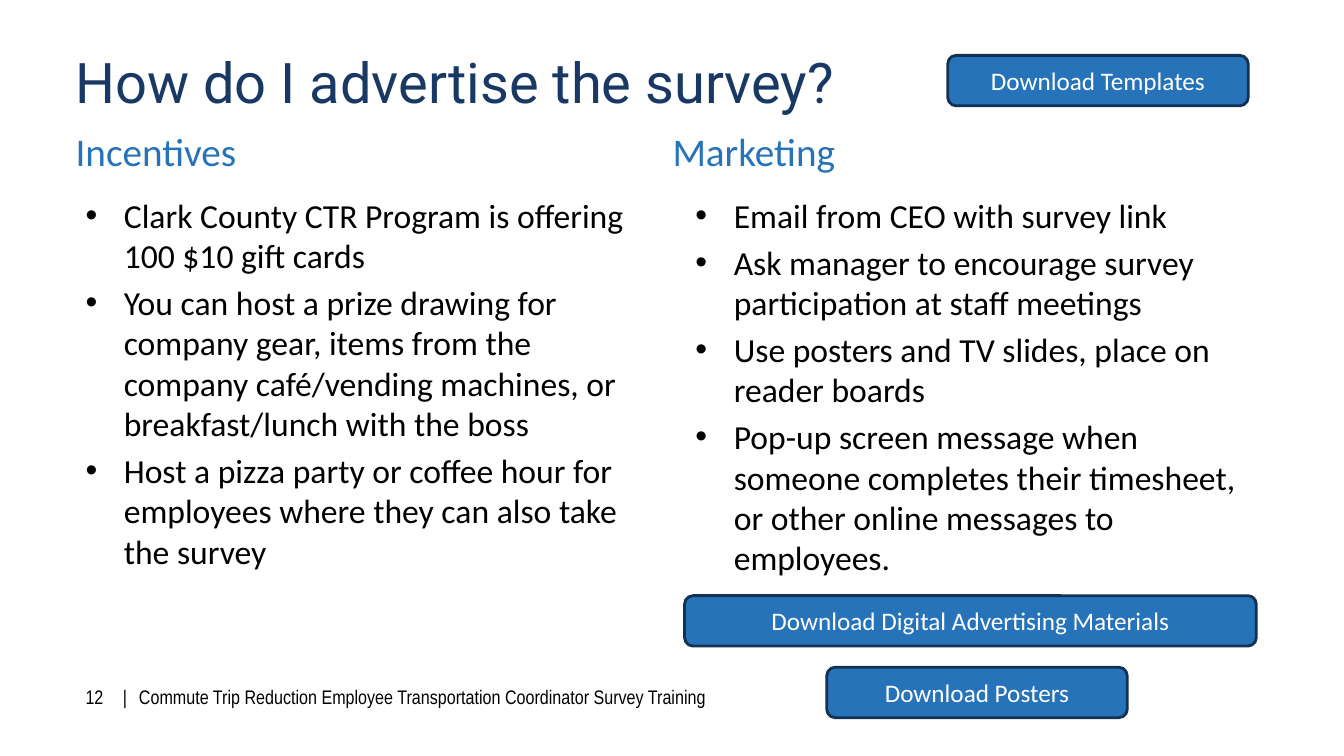
from dataclasses import dataclass

from lxml.etree import SubElement
from pptx import Presentation
from pptx.dml.color import RGBColor
from pptx.enum.shapes import MSO_SHAPE as Shape
from pptx.enum.text import MSO_ANCHOR as Anchor, MSO_AUTO_SIZE as AutoSize, PP_ALIGN as Align
from pptx.oxml.ns import qn
from pptx.util import Emu, Pt

EMU_PER_PX = 9144
COLORS = {
    "navy": "193964",
    "blue": "2773BA",
    "edge": "113252",
    "black": "000000",
    "white": "FFFFFF",
}


@dataclass(frozen=True)
class Box:
    left: int
    top: int
    width: int
    height: int


@dataclass(frozen=True)
class Style:
    font: str
    size: int
    color: str


@dataclass(frozen=True)
class Column:
    heading: str
    heading_box: Box
    bullets: list[str]
    bullets_box: Box


@dataclass(frozen=True)
class Button:
    label: str
    box: Box


TITLE = Style("Roboto", 40, "navy")
HEADING = Style("Calibri", 28, "blue")
BODY = Style("Calibri", 24, "black")
FOOTER = Style("Arial Narrow", 14, "black")
BUTTON = Style("Calibri", 18, "white")

BULLET_INDENT = 38
FOOTER_TABS = [37, 53]

COLUMNS = [
    Column(
        "Incentives",
        Box(75, 126, 592, 47),
        [
            "Clark County CTR Program is offering 100 $10 gift cards",
            "You can host a prize drawing for company gear, items from the "
            "company café/vending machines, or breakfast/lunch with the boss",
            "Host a pizza party or coffee hour for employees where they can "
            "also take the survey",
        ],
        Box(75, 188, 558, 370),
    ),
    Column(
        "Marketing",
        Box(667, 126, 592, 47),
        [
            "Email from CEO with survey link",
            "Ask manager to encourage survey participation at staff meetings",
            "Use posters and TV slides, place on reader boards",
            "Pop-up screen message when someone completes their timesheet, "
            "or other online messages to employees.",
        ],
        Box(680, 188, 577, 370),
    ),
]

BUTTONS = [
    Button("Download Templates", Box(940, 55, 298, 50)),
    Button("Download Digital Advertising Materials", Box(679, 591, 567, 50)),
    Button("Download Posters", Box(820, 662, 298, 50)),
]


def px(length: int) -> Emu:
    return Emu(length * EMU_PER_PX)


def rgb(name: str) -> RGBColor:
    return RGBColor.from_string(COLORS[name])


def place(box: Box) -> tuple[Emu, Emu, Emu, Emu]:
    return px(box.left), px(box.top), px(box.width), px(box.height)


def format_runs(text_frame, style: Style) -> None:
    for paragraph in text_frame.paragraphs:
        for run in paragraph.runs:
            run.font.name = style.font
            run.font.size = Pt(style.size)
            run.font.color.rgb = rgb(style.color)


def remove_margins(text_frame) -> None:
    text_frame.margin_left = text_frame.margin_right = 0
    text_frame.margin_top = text_frame.margin_bottom = 0


def add_title(slide, text: str, box: Box) -> None:
    title = slide.shapes.title
    title.left, title.top, title.width, title.height = place(box)
    text_frame = title.text_frame
    text_frame.text = text
    text_frame.auto_size = AutoSize.NONE
    text_frame.vertical_anchor = Anchor.MIDDLE
    remove_margins(text_frame)
    text_frame.paragraphs[0].alignment = Align.LEFT
    format_runs(text_frame, TITLE)


def add_text(slide, text: str, box: Box, style: Style):
    text_frame = slide.shapes.add_textbox(*place(box)).text_frame
    text_frame.word_wrap = True
    text_frame.text = text
    format_runs(text_frame, style)
    return text_frame


def add_bullets(slide, bullets: list[str], box: Box) -> None:
    text_frame = add_text(slide, "\n".join(bullets), box, BODY)
    for index, paragraph in enumerate(text_frame.paragraphs):
        if index:
            paragraph.space_before = Pt(BODY.size * 0.2)
        properties = paragraph._p.get_or_add_pPr()
        properties.set("marL", str(px(BULLET_INDENT)))
        properties.set("indent", str(-px(BULLET_INDENT)))
        SubElement(properties, qn("a:buFont"), typeface="Arial")
        SubElement(properties, qn("a:buChar"), char="•")


def add_column(slide, column: Column) -> None:
    remove_margins(add_text(slide, column.heading, column.heading_box, HEADING))
    add_bullets(slide, column.bullets, column.bullets_box)


def add_footer(slide, text: str, box: Box) -> None:
    text_frame = add_text(slide, text, box, FOOTER)
    properties = text_frame.paragraphs[0]._p.get_or_add_pPr()
    tabs = SubElement(properties, qn("a:tabLst"))
    for position in FOOTER_TABS:
        SubElement(tabs, qn("a:tab"), pos=str(px(position)), algn="l")


def add_button(slide, button: Button) -> None:
    shape = slide.shapes.add_shape(Shape.ROUNDED_RECTANGLE, *place(button.box))
    shape.shadow.inherit = False
    shape.fill.solid()
    shape.fill.fore_color.rgb = rgb("blue")
    shape.line.color.rgb = rgb("edge")
    shape.line.width = Pt(2)
    text_frame = shape.text_frame
    text_frame.text = button.label
    text_frame.vertical_anchor = Anchor.MIDDLE
    text_frame.paragraphs[0].alignment = Align.CENTER
    format_runs(text_frame, BUTTON)


def main() -> None:
    presentation = Presentation()
    presentation.slide_width = px(1333)
    presentation.slide_height = px(750)
    title_only = presentation.slide_layouts.get_by_name("Title Only")
    slide = presentation.slides.add_slide(title_only)

    add_title(slide, "How do I advertise the survey?", Box(75, 44, 1183, 73))
    for column in COLUMNS:
        add_column(slide, column)
    add_footer(
        slide,
        "12\t|\tCommute Trip Reduction Employee Transportation Coordinator Survey Training",
        Box(75, 675, 1149, 37),
    )
    for button in BUTTONS:
        add_button(slide, button)

    presentation.save("out.pptx")


if __name__ == "__main__":
    main()
